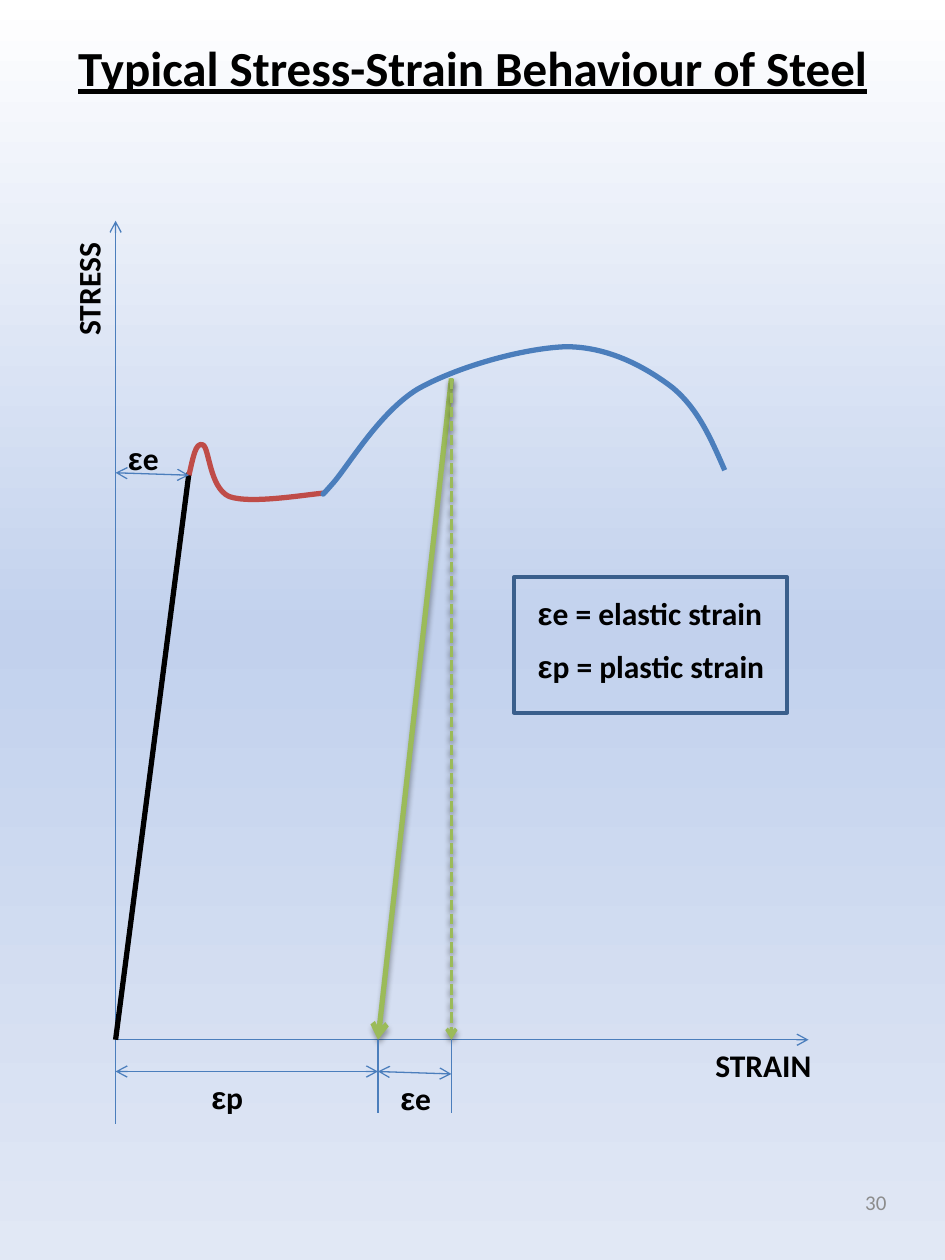
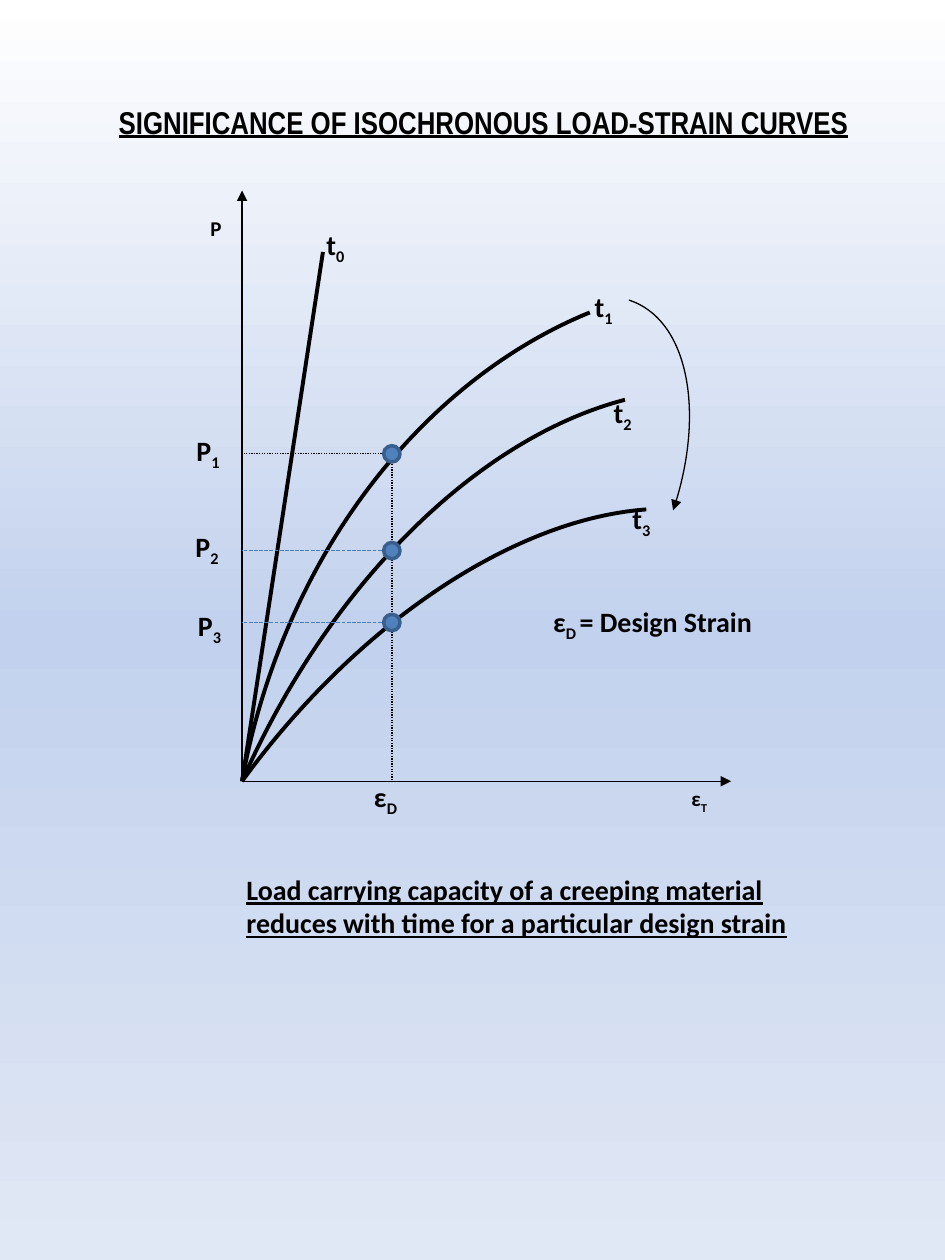
from copy import deepcopy
from dataclasses import dataclass

from pptx import Presentation
from pptx.dml.color import RGBColor
from pptx.enum.dml import MSO_LINE
from pptx.enum.shapes import MSO_CONNECTOR, MSO_SHAPE
from pptx.enum.text import MSO_ANCHOR as ANCHOR, MSO_AUTO_SIZE as AUTO_SIZE, PP_ALIGN as ALIGN
from pptx.oxml import parse_xml
from pptx.oxml.ns import nsdecls, qn
from pptx.oxml.xmlchemy import OxmlElement
from pptx.util import Cm, Pt

BLACK = RGBColor(0x00, 0x00, 0x00)
GREY = RGBColor(0x8C, 0x8C, 0x8C)
BLUE = RGBColor(0x4B, 0x7E, 0xBC)
DOT_BLUE = RGBColor(0x4F, 0x81, 0xBD)
DARK_BLUE = RGBColor(0x3A, 0x5F, 0x8C)
RED = RGBColor(0xBF, 0x4C, 0x48)
GREEN = RGBColor(0x9B, 0xBB, 0x59)
BACKGROUND_STOPS = [
    (0, RGBColor(0xFF, 0xFF, 0xFF)),
    (0.5, RGBColor(0xC2, 0xD1, 0xED)),
    (1, RGBColor(0xE1, 0xE8, 0xF5)),
]
BODY_FONT = "Calibri"


@dataclass
class Box:
    """A region in centimetres; parts are placed from its top left corner."""
    left: float
    top: float
    width: float
    height: float

    def point(self, x, y):
        return Cm(self.left + x), Cm(self.top + y)

    def inner(self, x, y, width, height):
        return Box(self.left + x, self.top + y, width, height)

    def frame(self):
        return (*self.point(0, 0), Cm(self.width), Cm(self.height))


# Shared drawing helpers

def set_background(master):
    fill = master.background.fill
    fill.gradient()
    fill.gradient_angle = 270
    stop_list = master.element.find(".//" + qn("a:gsLst"))
    stop_list.append(deepcopy(stop_list[-1]))
    for stop, (position, color) in zip(fill.gradient_stops, BACKGROUND_STOPS):
        stop.position = position
        stop.color.rgb = color


def add_text(slide, box, runs, size=18, font=BODY_FONT, color=BLACK, bold=True,
             underline=False, align=ALIGN.LEFT, anchor=ANCHOR.TOP, wrap=True,
             grow=True, vertical=None):
    """Runs are one string or a list of (text, font, baseline in percent)."""
    frame = slide.shapes.add_textbox(*box.frame()).text_frame
    frame.word_wrap = wrap
    frame.auto_size = AUTO_SIZE.SHAPE_TO_FIT_TEXT if grow else AUTO_SIZE.NONE
    frame.vertical_anchor = anchor
    if vertical:
        frame._txBody.bodyPr.set("vert", vertical)
    paragraph = frame.paragraphs[0]
    paragraph.alignment = align
    if isinstance(runs, str):
        runs = [(runs, font, 0)]
    for text, run_font, baseline in runs:
        run = paragraph.add_run()
        run.text = text
        run.font.name = run_font
        run.font.size = Pt(size)
        run.font.bold = bold
        run.font.underline = underline
        run.font.color.rgb = color
        if baseline:
            run.font._element.set("baseline", str(baseline * 1000))


def add_title(slide, box, text, **options):
    add_text(slide, box, text, underline=True, align=ALIGN.CENTER, **options)


def style_line(shape, color, width, dash=None, head=None, tail=None):
    shape.line.color.rgb = color
    shape.line.width = Pt(width)
    if dash:
        shape.line.dash_style = dash
    outline = shape.element.spPr.find(qn("a:ln"))
    for tag, kind in (("a:headEnd", head), ("a:tailEnd", tail)):
        if kind:
            end = OxmlElement(tag)
            end.set("type", kind)
            outline.append(end)


def add_line(slide, box, start, end, color=BLUE, width=0.75, shadow=None, **options):
    """Shadow is (opacity in percent, distance in points)."""
    line = slide.shapes.add_connector(
        MSO_CONNECTOR.STRAIGHT, *box.point(*start), *box.point(*end))
    style_line(line, color, width, **options)
    effects = OxmlElement("a:effectLst")
    if shadow:
        opacity, distance = shadow
        effects.append(parse_xml(
            f'<a:outerShdw {nsdecls("a")} blurRad="{Pt(3.1)}" dist="{Pt(distance)}" '
            f'dir="5400000" rotWithShape="0"><a:srgbClr val="{BLACK}">'
            f'<a:alpha val="{opacity * 1000}"/></a:srgbClr></a:outerShdw>'))
    line.element.spPr.append(effects)


def add_curve(slide, box, points, color=BLACK, width=2.25, **options):
    """Start point, then three Bezier points for each segment."""
    start, *rest = [box.point(*point) for point in points]
    builder = slide.shapes.build_freeform(*start)
    builder.add_line_segments(rest, close=False)
    curve = builder.convert_to_shape()
    segments = list(curve.element.iter(qn("a:lnTo")))
    for index in range(0, len(segments), 3):
        bezier = OxmlElement("a:cubicBezTo")
        segments[index].addprevious(bezier)
        for segment in segments[index:index + 3]:
            bezier.append(segment[0])
            segment.getparent().remove(segment)
    curve.fill.background()
    curve.shadow.inherit = False
    style_line(curve, color, width, **options)


def add_outlined_shape(slide, kind, box, fill=None):
    shape = slide.shapes.add_shape(kind, *box.frame())
    shape.shadow.inherit = False
    if fill:
        shape.fill.solid()
        shape.fill.fore_color.rgb = fill
    else:
        shape.fill.background()
    style_line(shape, DARK_BLUE, 2)


def epsilon(rest):
    return [("ε", "Arial", 0), (rest, BODY_FONT, 0)]


def subscript(symbol, index, rest=""):
    runs = [(symbol, BODY_FONT, 0), (index, BODY_FONT, -25)]
    return runs + [(rest, BODY_FONT, 0)] if rest else runs


# Slide 1: stress-strain behaviour

def draw_stress_strain(slide, box):
    base = box.height
    yield_x, yield_y = 1.48, 5.08
    plastic_x, total_x = 5.29, 6.77
    unload_y = 3.18

    # Axes and the stress curve
    add_line(slide, box, (0, base), (0, 0), tail="arrow")
    add_line(slide, box, (0, base), (box.width, base), tail="arrow")
    add_line(slide, box, (0, base), (yield_x, yield_y), color=BLACK, width=3)
    add_curve(slide, box, [
        (1.48, 5.13), (1.56, 4.8), (1.61, 4.45), (1.76, 4.52),
        (1.89, 4.57), (1.89, 5.38), (2.29, 5.56),
        (2.73, 5.72), (3.89, 5.51), (4.22, 5.49)], color=RED, width=3)
    add_curve(slide, box, [
        (4.2, 5.49), (4.12, 5.59), (4.35, 5.33), (4.35, 5.33),
        (4.66, 5), (5.29, 3.89), (6.08, 3.4),
        (6.87, 2.95), (8.21, 2.57), (9.08, 2.54),
        (9.94, 2.54), (10.68, 2.95), (11.21, 3.35),
        (11.74, 3.78), (12, 4.39), (12.28, 5.03)], color=BLUE, width=3)
    add_text(slide, box.inner(-1.06, 0.2, 1.27, 4.65), "STRESS",
             align=ALIGN.RIGHT, vertical="vert270")
    add_text(slide, box.inner(11.84, base, 2.54, 1.02), "STRAIN")

    # Unloading path
    add_line(slide, box, (total_x, unload_y), (plastic_x, base), color=GREEN,
             width=3, tail="arrow", shadow=(35, 1.8))
    add_line(slide, box, (total_x, unload_y), (total_x, base), color=GREEN,
             width=2, dash=MSO_LINE.SQUARE_DOT, tail="arrow", shadow=(38, 1.6))

    # Strain dimensions
    dimension_y = base + 0.64
    for start, end in [
            ((yield_x, yield_y + 0.05), (0, yield_y)),
            ((total_x, dimension_y + 0.05), (plastic_x, dimension_y)),
            ((plastic_x, dimension_y), (0, dimension_y))]:
        add_line(slide, box, start, end, head="arrow", tail="arrow")
    for x, length in [(plastic_x, 1.48), (total_x, 1.48), (0, 1.69)]:
        add_line(slide, box, (x, base), (x, base + length))
    for x, y, name in [(0, 4.27, "e"), (5.49, 17.17, "e"), (1.68, 17.15, "p")]:
        add_text(slide, box.inner(x, y, 1.47, 1.02), epsilon(name))


def draw_strain_legend(slide, box):
    for row, meaning in enumerate(["e = elastic strain", "p = plastic strain"]):
        add_text(slide, box.inner(0.23, 0.23 + 1.05 * row, 6.99, 1.02), epsilon(meaning))
    add_outlined_shape(slide, MSO_SHAPE.RECTANGLE, box)


def build_stress_strain_slide(slide):
    draw_stress_strain(slide, Box(2.33, 4.45, 13.97, 16.51))
    draw_strain_legend(slide, Box(10.36, 11.63, 5.51, 2.74))
    add_title(slide, Box(0, 0.64, 19.05, 1.45),
              "Typical Stress-Strain Behaviour of Steel", size=28)
    add_text(slide, Box(13.67, 23.55, 4.45, 1.35), "30", size=12, color=GREY,
             bold=False, align=ALIGN.RIGHT, anchor=ANCHOR.MIDDLE, grow=False)


# Slide 2: isochronous load-strain curves

def draw_isochronous_curves(slide, box):
    base = box.height
    origin = (0, base)
    design_x, dot_size = 3.02, 0.33

    # Load curves, later times lower
    for points in [
            [(7.72, 4.22), (4.72, 5), (1.73, 7.98), origin],
            [(8.15, 6.43), (5.46, 6.63), (2.31, 8.74), origin],
            [(7.01, 2.46), (3.51, 3.89), (0.79, 7.54), origin]]:
        add_curve(slide, box, points)
    add_line(slide, box, origin, (1.63, 1.24), color=BLACK, width=2.25)

    # Axes and the arrow of time
    for end in [(0, 0), (box.width, base)]:
        add_line(slide, box, origin, end, color=BLACK, tail="triangle")
    add_curve(slide, box, [(7.8, 2.21), (8.97, 2.59), (9.35, 4.5), (8.69, 6.45)],
              width=0.75, tail="triangle")

    # Design strain and the load each curve carries there
    add_line(slide, box, (design_x, 5.31), (design_x, base), color=BLACK,
             dash=MSO_LINE.ROUND_DOT)
    for load_y, color, dash in [
            (5.31, BLACK, MSO_LINE.ROUND_DOT),
            (7.26, BLUE, MSO_LINE.SQUARE_DOT),
            (8.71, BLUE, MSO_LINE.SQUARE_DOT)]:
        add_line(slide, box, (design_x, load_y), (0, load_y), color=color, dash=dash)
        add_outlined_shape(
            slide, MSO_SHAPE.OVAL,
            box.inner(design_x - dot_size / 2, load_y - dot_size / 2, dot_size, dot_size),
            fill=DOT_BLUE)

    # Labels
    for index, (x, y) in enumerate([(1.45, 0.46), (6.86, 1.7), (7.24, 3.84), (7.62, 5.99)]):
        add_text(slide, box.inner(x, y, 1.24, 1.35), subscript("t", str(index)),
                 size=16, anchor=ANCHOR.MIDDLE, wrap=False)
    for x, y, width, runs in [
            (-1.17, 4.62, 1.68, subscript("P", "1")),
            (-1.19, 6.55, 1.68, subscript("P", "2")),
            (-1.14, 8.13, 1.68, subscript("P", "3")),
            (2.41, 11.58, 1.93, subscript("ε", "D")),
            (6.02, 8.05, 6.35, subscript("ε", "D ", "= Design Strain"))]:
        add_text(slide, box.inner(x, y, width, 1.35), runs, size=16, anchor=ANCHOR.MIDDLE)
    for x, y, runs in [(-0.89, 0.2, "P"), (8.81, 11.73, subscript("ε", "T"))]:
        add_text(slide, box.inner(x, y, 1.2, 1.12), runs, size=12,
                 anchor=ANCHOR.MIDDLE, wrap=False)


def build_isochronous_slide(slide):
    add_title(slide, Box(1.7, 1.96, 16.1, 1.02),
              "SIGNIFICANCE OF ISOCHRONOUS LOAD-STRAIN CURVES", font="Arial Narrow")
    draw_isochronous_curves(slide, Box(4.88, 3.84, 9.86, 11.91))
    add_text(slide, Box(4.72, 17.45, 11.48, 1.63),
             "Load carrying capacity of a creeping material reduces with time "
             "for a particular design strain",
             size=16, underline=True, anchor=ANCHOR.MIDDLE)


def main():
    presentation = Presentation()
    presentation.slide_width = Cm(19.05)
    presentation.slide_height = Cm(25.4)
    set_background(presentation.slide_master)
    blank = presentation.slide_layouts[6]
    for build in (build_stress_strain_slide, build_isochronous_slide):
        build(presentation.slides.add_slide(blank))
    presentation.save("out.pptx")


if __name__ == "__main__":
    main()
